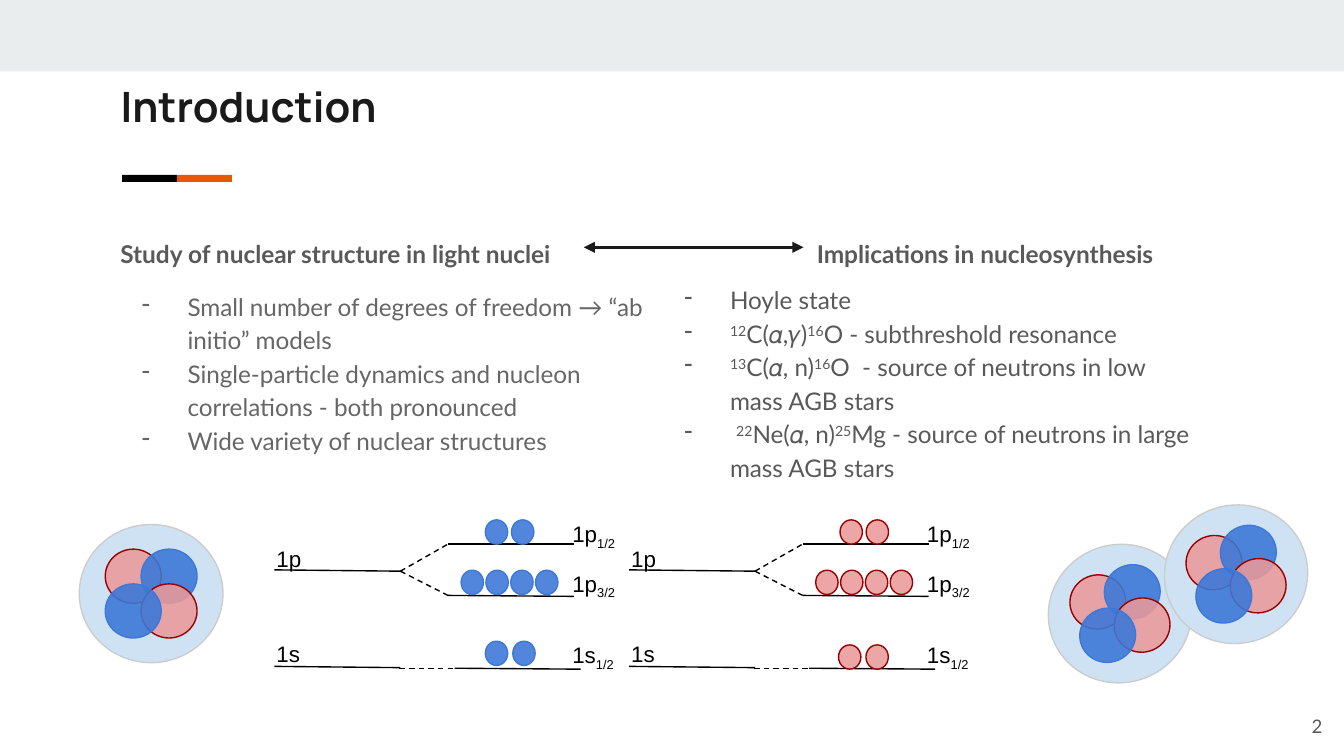
from math import cos, radians, sin

from lxml.etree import SubElement
from pptx import Presentation
from pptx.dml.color import RGBColor
from pptx.enum.dml import MSO_LINE
from pptx.enum.shapes import MSO_CONNECTOR as Connector, MSO_SHAPE as Preset
from pptx.enum.text import MSO_ANCHOR as Anchor, MSO_AUTO_SIZE as AutoSize, PP_ALIGN as Align
from pptx.oxml.ns import qn
from pptx.util import Pt

COLORS = {
    "band": "E9EDEE", "accent": "EB5600", "black": "000000", "title": "1A1A1A",
    "text": "595959", "light_text": "666666", "nucleus": "CFE2F3", "rim": "CCCCCC",
    "proton": "EA9999", "proton_rim": "980000", "neutron": "3C78D8",
}
PARTICLES = {"proton": ("proton", "proton_rim", 87), "neutron": ("neutron", "neutron", 89)}
FONTS = {
    "title": {"name": "Manrope", "size": Pt(22.4), "bold": True},
    "heading": {"name": "Lato", "size": Pt(13.1), "bold": True},
    "body": {"name": "Lato", "size": Pt(13)},
    "level": {"name": "Arial", "size": Pt(12)},
    "number": {"name": "Lato", "size": Pt(10)},
}
FRAME = {
    "word_wrap": True, "auto_size": AutoSize.NONE, "vertical_anchor": Anchor.TOP,
    "margin_left": Pt(7.2), "margin_right": Pt(7.2),
    "margin_top": Pt(7.2), "margin_bottom": Pt(7.2),
}
SCHEME_SHIFT = 190
LEVELS = [
    (147, 357, 214.5, 357.7), (240, 291.5, 307.5, 291.5), (240, 319, 307.5, 319.5),
    (243.5, 358, 311, 358.5), (147, 305.3, 214.5, 306),
]
SPLITS = [(214.5, 306, 240, 319), (214, 358.3, 244, 358.3), (214.5, 306, 240, 291.5)]
LEVEL_LABELS = [
    (141, 335.5, "1s"), (141, 285, "1p"),
    (299.5, 271.5, "1p|1/2"), (299.5, 298, "1p|3/2"), (299.5, 336.5, "1s|1/2"),
]
STRUCTURE_POINTS = [
    "Small number of degrees of freedom → “ab initio” models",
    "Single-particle dynamics and nucleon correlations - both pronounced",
    "Wide variety of nuclear structures",
]
REACTION_POINTS = [
    "Hoyle state",
    "|12|C(𝛼,𝛾)|16|O - subthreshold resonance",
    "|13|C(𝛼, n)|16|O  - source of neutrons in low mass AGB stars",
    " |22|Ne(𝛼, n)|25|Mg - source of neutrons in large mass AGB stars",
]


def color(name):
    return RGBColor.from_string(COLORS[name])


def set_values(target, values):
    for name, value in values.items():
        setattr(target, name, value)


def add_runs(paragraph, text, font, color_name, shift=30):
    for index, part in enumerate(text.split("|")):
        if not part:
            continue
        run = paragraph.add_run()
        run.text = part
        set_values(run.font, FONTS[font])
        run.font.color.rgb = color(color_name)
        if index % 2:
            run._r.get_or_add_rPr().set("baseline", str(shift * 1000))


def add_text(slide, box, text, font, color_name, shift=30, paragraph_values=None, anchor=Anchor.TOP):
    shape = slide.shapes.add_textbox(*map(Pt, box))
    set_values(shape.text_frame, {**FRAME, "vertical_anchor": anchor})
    paragraph = shape.text_frame.paragraphs[0]
    set_values(paragraph, paragraph_values or {})
    add_runs(paragraph, text, font, color_name, shift)
    return shape


def add_title(slide, box, text):
    title = slide.shapes.title
    set_values(title, dict(zip(("left", "top", "width", "height"), map(Pt, box))))
    set_values(title.text_frame, FRAME)
    paragraph = title.text_frame.paragraphs[0]
    paragraph.alignment = Align.LEFT
    add_runs(paragraph, text, "title", "title")


def add_bullets(slide, box, points, color_name):
    shape = slide.shapes.add_textbox(*map(Pt, box))
    frame = shape.text_frame
    set_values(frame, FRAME)
    for index, point in enumerate(points):
        paragraph = frame.add_paragraph() if index else frame.paragraphs[0]
        properties = paragraph._p.get_or_add_pPr()
        properties.set("marL", str(Pt(36)))
        properties.set("indent", str(-Pt(24.5)))
        bullet_color = SubElement(properties, qn("a:buClr"))
        SubElement(bullet_color, qn("a:srgbClr"), val=COLORS[color_name])
        SubElement(properties, qn("a:buChar"), char="-")
        paragraph.line_spacing = 1.15
        add_runs(paragraph, point, "body", color_name)


def add_shape(slide, preset, box, fill, line=None, opacity=100):
    shape = slide.shapes.add_shape(preset, *map(Pt, box))
    shape.shadow.inherit = False
    shape.fill.solid()
    shape.fill.fore_color.rgb = color(fill)
    if opacity < 100:
        fill_color = shape._element.spPr.find(qn("a:solidFill")).find(qn("a:srgbClr"))
        SubElement(fill_color, qn("a:alpha"), val=str(opacity * 1000))
    if line:
        shape.line.color.rgb = color(line)
        shape.line.width = Pt(0.75)
    else:
        shape.line.fill.background()
    return shape


def add_line(slide, ends, width=0.75, color_name="black", dash=None):
    connector = slide.shapes.add_connector(Connector.STRAIGHT, *map(Pt, ends))
    connector.line.color.rgb = color(color_name)
    connector.line.width = Pt(width)
    if dash:
        connector.line.dash_style = dash
    SubElement(connector._element.spPr, qn("a:effectLst"))
    return connector


def add_double_arrow(slide, start, end):
    connector = add_line(slide, (312.5, 132.5, 430.5, 132.5), 1.5, "title")
    connector.begin_connect(start, 3)
    connector.end_connect(end, 1)
    line = connector.line._get_or_add_ln()
    for tag in ("a:headEnd", "a:tailEnd"):
        SubElement(line, qn(tag), type="triangle")


def add_ellipse(slide, x, y, width, height, style, rotation=0):
    box = (x - width / 2, y - height / 2, width, height)
    add_shape(slide, Preset.OVAL, box, *style).rotation = rotation


def add_nucleus(slide, x, y, rotation=0):
    add_ellipse(slide, x, y, 77, 74, ("nucleus", "rim"), rotation)
    turn = radians(rotation)
    corners = [(-9.6, -9.3), (9.6, -9.3), (9.6, 9.3), (-9.6, 9.3)]
    for index, (dx, dy) in enumerate(corners):
        particle = PARTICLES["neutron" if index % 2 else "proton"]
        center_x = x + dx * cos(turn) - dy * sin(turn)
        center_y = y + dx * sin(turn) + dy * cos(turn)
        add_ellipse(slide, center_x, center_y, 30, 29, particle, rotation)


def add_level_scheme(slide, shift, particle, ground_row):
    for lines, dash in ((LEVELS, None), (SPLITS, MSO_LINE.DASH)):
        for x1, y1, x2, y2 in lines:
            add_line(slide, (x1 + shift, y1, x2 + shift, y2), dash=dash)
    for x, y, label in LEVEL_LABELS:
        add_text(slide, (x + shift, y, 49, 30), label, "level", "black", -25)
    for count, x, y, step in ((2, 266, 285, 14), (4, 253, 312, 13.3), ground_row):
        for index in range(count):
            center = x + shift + index * step
            add_ellipse(slide, center, y, 12, 13, PARTICLES[particle])


def main():
    presentation = Presentation()
    set_values(presentation, {"slide_width": Pt(720), "slide_height": Pt(405)})
    slide = presentation.slides.add_slide(presentation.slide_layouts[5])

    add_shape(slide, Preset.RECTANGLE, (0, 0, 720, 38.3), "band")
    for index, name in enumerate(("black", "accent")):
        add_shape(slide, Preset.RECTANGLE, (65.4 + index * 29.4, 93.7, 29.4, 3.7), name)
    add_title(slide, (57.4, 36, 605.5, 42.5), "Introduction")

    add_bullets(slide, (57.4, 147, 297.5, 122.5), STRUCTURE_POINTS, "light_text")
    add_bullets(slide, (348, 143.5, 297.5, 108.5), REACTION_POINTS, "text")
    spacing = {"line_spacing": 1.15, "space_after": Pt(12)}
    headings = [
        add_text(slide, (left, 118.5, width, 28), text, "heading", "text", paragraph_values=spacing)
        for left, width, text in (
            (57.4, 255.4, "Study of nuclear structure in light nuclei"),
            (430.5, 232.5, "Implications in nucleosynthesis"),
        )
    ]
    add_double_arrow(slide, *headings)

    add_nucleus(slide, 81, 318)
    add_nucleus(slide, 600, 328.7, -16.5)
    add_nucleus(slide, 662.2, 307.6, -16.5)
    add_level_scheme(slide, 0, "neutron", (2, 266, 350, 14.7))
    add_level_scheme(slide, SCHEME_SHIFT, "proton", (2, 265.2, 352, 14.7))

    add_text(slide, (672.5, 373.7, 43, 31), "2", "number", "text",
             paragraph_values={"alignment": Align.RIGHT}, anchor=Anchor.MIDDLE)
    presentation.save("out.pptx")


if __name__ == "__main__":
    main()
